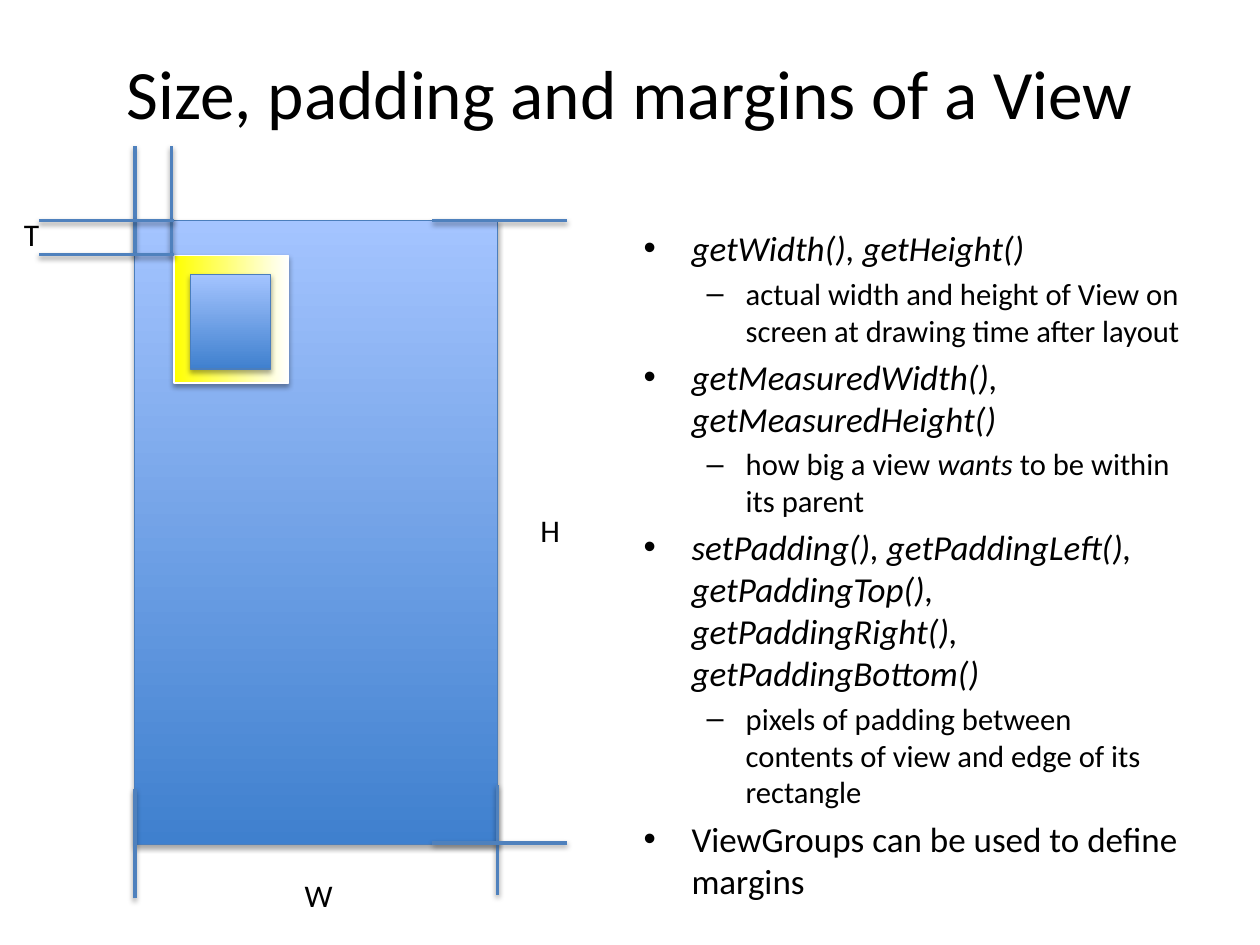
from collections import namedtuple

from lxml import etree
from pptx import Presentation
from pptx.dml.color import RGBColor
from pptx.enum.shapes import MSO_CONNECTOR, MSO_SHAPE
from pptx.enum.text import MSO_ANCHOR, PP_ALIGN
from pptx.oxml.ns import qn
from pptx.util import Inches, Pt

STRAIGHT = MSO_CONNECTOR.STRAIGHT
RECTANGLE = MSO_SHAPE.RECTANGLE
MIDDLE, TOP = MSO_ANCHOR.MIDDLE, MSO_ANCHOR.TOP
LEFT, CENTER = PP_ALIGN.LEFT, PP_ALIGN.CENTER

SLIDE_WIDTH, SLIDE_HEIGHT = Inches(10), Inches(7.5)
COLUMNS, ROWS = 100, 75
FONT, INK, GUIDE = "Calibri", "000000", "4F81BD"
BLUE_FADE, YELLOW_FADE = ("3F80CE", "A4C4FF"), ("FFFF00", "FFFFFF")
BLUE_EDGE, WHITE_EDGE = "4B7EBC", "FFFFFF"

Box = namedtuple("Box", "left top width height")
Level = namedtuple("Level", "bullet size margin hang")

LEVELS = [Level("•", 20, 0.38, 0.38), Level("–", 17.5, 0.81, 0.31)]
METHODS = [
    (0, [("getWidth(), getHeight()", True)]),
    (1, [("actual width and height of View on screen at drawing time after layout", False)]),
    (0, [("getMeasuredWidth(), getMeasuredHeight()", True)]),
    (1, [("how big a view ", False), ("wants", True), (" to be within its parent", False)]),
    (0, [("setPadding(), getPaddingLeft(), getPaddingTop(), "
          "getPaddingRight(), getPaddingBottom()", True)]),
    (1, [("pixels of padding between contents of view and edge of its rectangle", False)]),
    (0, [("ViewGroups can be used to define margins", False)]),
]


def col(count):
    return int(SLIDE_WIDTH * count / COLUMNS)


def row(count):
    return int(SLIDE_HEIGHT * count / ROWS)


def place(box):
    return col(box.left), row(box.top), col(box.width), row(box.height)


def color(code):
    return RGBColor.from_string(code)


def write(paragraph, text, size=18, italic=False, align=LEFT):
    paragraph.alignment = align
    run = paragraph.add_run()
    run.text = text
    run.font.name = FONT
    run.font.size = Pt(size)
    run.font.italic = italic
    run.font.color.rgb = color(INK)


def cast_shadow(effects, distance, opacity):
    shadow = etree.SubElement(
        effects, qn("a:outerShdw"), blurRad=str(Pt(3.1)), dist=str(Pt(distance)),
        dir="5400000", rotWithShape="0")
    tint = etree.SubElement(shadow, qn("a:srgbClr"), val=INK)
    etree.SubElement(tint, qn("a:alpha"), val=str(opacity * 1000))


def add_panel(slide, box, fade, edge, angle):
    panel = slide.shapes.add_shape(RECTANGLE, *place(box))
    panel.fill.gradient()
    panel.fill.gradient_angle = angle
    for stop, code in zip(panel.fill.gradient_stops, fade):
        stop.color.rgb = color(code)
    panel.line.color.rgb = color(edge)
    panel.line.width = Pt(0.75)
    panel.shadow.inherit = False
    cast_shadow(panel._element.spPr.find(qn("a:effectLst")), 1.8, 35)


def add_guide(slide, start, end):
    guide = slide.shapes.add_connector(
        STRAIGHT, col(start[0]), row(start[1]), col(end[0]), row(end[1]))
    guide.line.color.rgb = color(GUIDE)
    guide.line.width = Pt(2)
    effects = etree.SubElement(guide._element.spPr, qn("a:effectLst"))
    cast_shadow(effects, 1.6, 38)


def add_label(slide, text, left, top):
    label = slide.shapes.add_textbox(*place(Box(left, top, 3.1, 4)))
    label.text_frame.word_wrap = False
    write(label.text_frame.paragraphs[0], text)


def add_title(slide, box, text):
    title = slide.shapes.title
    title.left, title.top, title.width, title.height = place(box)
    title.text_frame.vertical_anchor = MIDDLE
    write(title.text_frame.paragraphs[0], text, size=39.6, align=CENTER)


def add_methods(slide, box):
    frame = slide.shapes.add_textbox(*place(box)).text_frame
    frame.word_wrap = True
    frame.vertical_anchor = TOP
    for index, (depth, parts) in enumerate(METHODS):
        paragraph = frame.add_paragraph() if index else frame.paragraphs[0]
        level = LEVELS[depth]
        paragraph.level = depth
        paragraph.space_before = Pt(level.size * 0.2)
        properties = paragraph._p.get_or_add_pPr()
        properties.set("marL", str(Inches(level.margin)))
        properties.set("indent", str(-Inches(level.hang)))
        etree.SubElement(properties, qn("a:buFont"), typeface="Arial")
        etree.SubElement(properties, qn("a:buChar"), char=level.bullet)
        for text, italic in parts:
            write(paragraph, text, size=level.size, italic=italic)


def add_view_diagram(slide, box):
    right, bottom = box.left + box.width, box.top + box.height
    padding, reach, tail = 2.9, 8.7, 10.7
    margin_box = Box(box.left + 3.1, box.top + 2.8, 9.1, 10.1)
    content = Box(margin_box.left + 1.3, margin_box.top + 1.5, 6.4, 7.5)

    add_panel(slide, box, BLUE_FADE, BLUE_EDGE, 90)
    add_panel(slide, margin_box, YELLOW_FADE, WHITE_EDGE, 0)

    for x in (box.left + padding, box.left):
        add_guide(slide, (x, margin_box.top), (x, margin_box.top - reach))
    for y in (box.top, box.top + 2.7):
        add_guide(slide, (margin_box.left, y), (margin_box.left - tail, y))
    for x, y in ((box.left, bottom + 4.3), (right, bottom + 4)):
        add_guide(slide, (x, y), (x, y - reach))
    for y in (box.top, bottom - 0.1):
        add_guide(slide, (right + 5.5, y), (right + 5.5 - tail, y))

    add_label(slide, "T", box.left - 9.8, box.top - 0.9)
    add_label(slide, "W", box.left + 12.5, bottom + 2)
    add_label(slide, "H", right + 2.4, box.top + 22.6)
    add_panel(slide, content, BLUE_FADE, BLUE_EDGE, 90)


def main():
    deck = Presentation()
    deck.slide_width, deck.slide_height = SLIDE_WIDTH, SLIDE_HEIGHT
    slide = deck.slides.add_slide(deck.slide_layouts.get_by_name("Title Only"))
    add_title(slide, Box(5, 3, 90, 8.6), "Size, padding and margins of a View")
    add_methods(slide, Box(50.1, 17.5, 44.9, 49.5))
    add_view_diagram(slide, Box(10.7, 17.5, 28.8, 49.5))
    deck.save("out.pptx")


if __name__ == "__main__":
    main()
